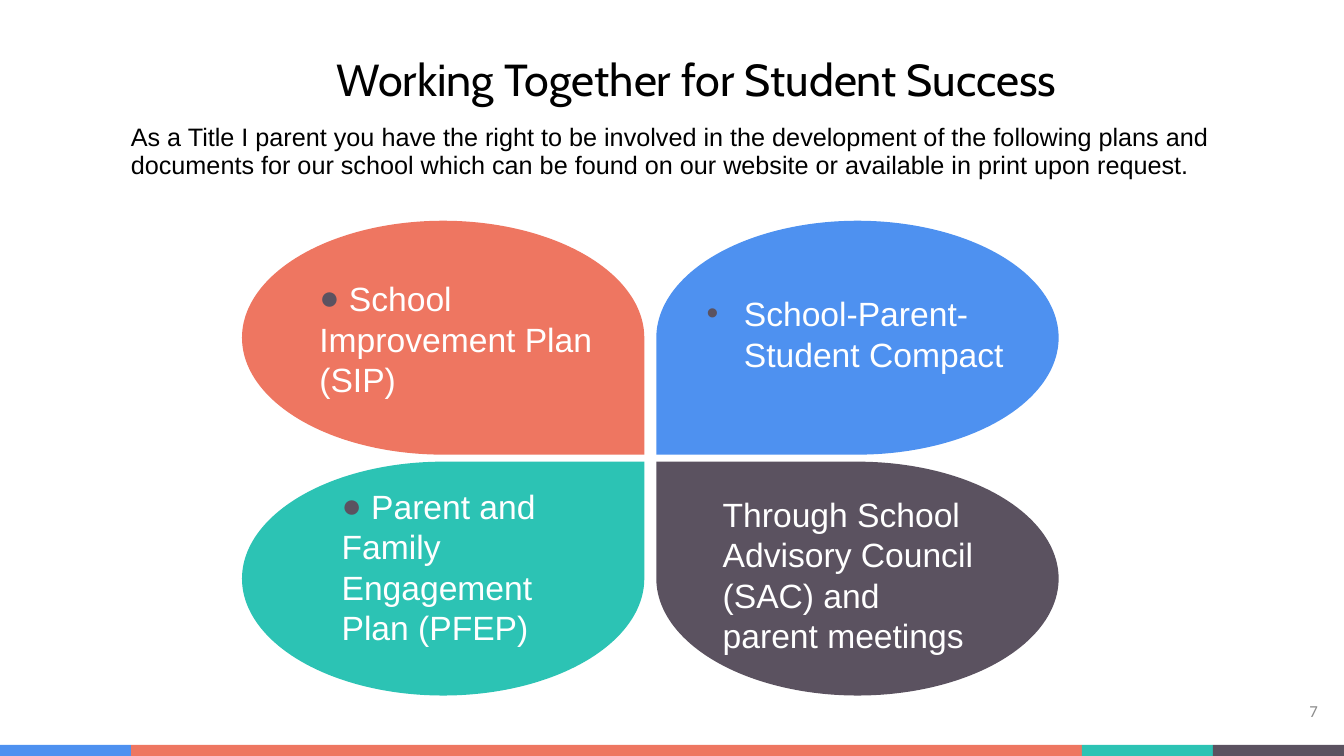
"""Build the slide on working together for student success."""
from dataclasses import dataclass

from lxml.etree import SubElement
from pptx import Presentation
from pptx.dml.color import RGBColor
from pptx.enum.shapes import MSO_SHAPE
from pptx.enum.text import MSO_ANCHOR, MSO_AUTO_SIZE, PP_ALIGN
from pptx.oxml.ns import qn
from pptx.shapes.autoshape import Shape
from pptx.slide import Slide
from pptx.util import Inches, Pt

CORAL = RGBColor(0xEE, 0x76, 0x61)
BLUE = RGBColor(0x4E, 0x91, 0xF0)
TEAL = RGBColor(0x2C, 0xC3, 0xB4)
PLUM = RGBColor(0x5B, 0x52, 0x60)
GRAY = RGBColor(0x8C, 0x8C, 0x8C)
BLACK = RGBColor(0, 0, 0)
WHITE = RGBColor(255, 255, 255)

WIDTH, HEIGHT = 13.33, 7.5
BAND = 0.11
LEFTS = (2.4, 6.51)
TOPS = (2.19, 4.58)
PETAL_W, PETAL_H = 3.99, 2.32


@dataclass
class Label:
    text: str
    left: float
    top: float
    width: float
    height: float
    size: int = 24
    font: str = "Arial"
    color: RGBColor = WHITE
    align: PP_ALIGN = PP_ALIGN.LEFT
    anchor: MSO_ANCHOR = MSO_ANCHOR.TOP
    inset: float = 0.05
    line: float = 1.0
    grow: bool = False
    bullet: str = ""
    hang: float = 0


@dataclass
class Petal:
    col: int
    row: int
    color: RGBColor
    label: Label


@dataclass
class Stripe:
    left: float
    width: float
    color: RGBColor


STRIPES = [
    Stripe(0, 1.3, BLUE),
    Stripe(1.3, 9.43, CORAL),
    Stripe(10.73, 1.3, TEAL),
    Stripe(12.03, 1.3, PLUM),
]

PETALS = [
    Petal(0, 0, CORAL, Label(" School Improvement Plan (SIP)",
                             3.07, 2.71, 2.96, 1.31, grow=True, bullet="●")),
    Petal(0, 1, TEAL, Label(" Parent and Family Engagement Plan (PFEP)",
                            3.29, 4.77, 2.43, 1.72, grow=True, bullet="●")),
    Petal(1, 1, PLUM, Label(
        "Through School Advisory Council (SAC) and parent meetings",
        7.07, 4.85, 2.7, 1.72, grow=True)),
    Petal(1, 0, BLUE, Label("School-Parent-Student Compact",
                            6.91, 2.86, 3.19, 0.91, grow=True,
                            bullet="•", hang=0.37)),
]

LABELS = [
    Label("Working Together for Student Success", 2.2, -0.1, 9.42, 1.25,
          32, "Cabin", BLACK, PP_ALIGN.CENTER, MSO_ANCHOR.BOTTOM, 0.1, 0.9),
    Label("As a Title I parent you have the right to be involved in the "
          "development of the following plans and documents for our school "
          "which can be found on our website or available in print upon "
          "request.", 1.2, 1.14, 10.97, 5.35, 18, color=BLACK, inset=0.1,
          line=0.9),
    Label("7", 12.37, 6.85, 0.8, 0.46, 12, "Calibri", GRAY, PP_ALIGN.RIGHT,
          inset=0.1),
]


def draw_shape(slide: Slide, kind: MSO_SHAPE, left: float, top: float,
               width: float, height: float, color: RGBColor) -> Shape:
    shape = slide.shapes.add_shape(
        kind, Inches(left), Inches(top), Inches(width), Inches(height))
    shape.shadow.inherit = False
    shape.fill.solid()
    shape.fill.fore_color.rgb = color
    shape.line.fill.background()
    return shape


def draw_petal(slide: Slide, petal: Petal) -> None:
    shape = draw_shape(slide, MSO_SHAPE.TEAR, LEFTS[petal.col],
                       TOPS[petal.row], PETAL_W, PETAL_H, petal.color)
    frame = shape._element.spPr.find(qn("a:xfrm"))
    if petal.col == 1:
        frame.set("flipH", "1")
    if petal.row == 0:
        frame.set("flipV", "1")


def draw_label(slide: Slide, label: Label) -> None:
    box = slide.shapes.add_textbox(
        Inches(label.left), Inches(label.top),
        Inches(label.width), Inches(label.height))
    frame = box.text_frame
    frame.word_wrap = True
    frame.vertical_anchor = label.anchor
    frame.margin_top = frame.margin_bottom = Inches(label.inset)
    if label.grow:
        frame.auto_size = MSO_AUTO_SIZE.SHAPE_TO_FIT_TEXT
    para = frame.paragraphs[0]
    para.text = label.text
    para.alignment = label.align
    para.line_spacing = label.line
    para.font.size = Pt(label.size)
    para.font.name = label.font
    para.font.color.rgb = label.color
    if label.bullet:
        props = para._p.get_or_add_pPr()
        props.set("marL", str(Inches(label.hang)))
        props.set("indent", str(Inches(-label.hang)))
        tint = SubElement(props, qn("a:buClr"))
        SubElement(tint, qn("a:srgbClr"), val=str(PLUM))
        SubElement(props, qn("a:buFont"), typeface=label.font)
        SubElement(props, qn("a:buChar"), char=label.bullet)
        props.append(props.find(qn("a:defRPr")))


def main() -> None:
    deck = Presentation()
    deck.slide_width, deck.slide_height = Inches(WIDTH), Inches(HEIGHT)
    slide = deck.slides.add_slide(deck.slide_layouts[6])
    for stripe in STRIPES:
        draw_shape(slide, MSO_SHAPE.RECTANGLE, stripe.left, HEIGHT - BAND,
                   stripe.width, BAND, stripe.color)
    for label in LABELS:
        draw_label(slide, label)
    for petal in PETALS:
        draw_petal(slide, petal)
    for petal in PETALS:
        draw_label(slide, petal.label)
    deck.save("out.pptx")


if __name__ == "__main__":
    main()
